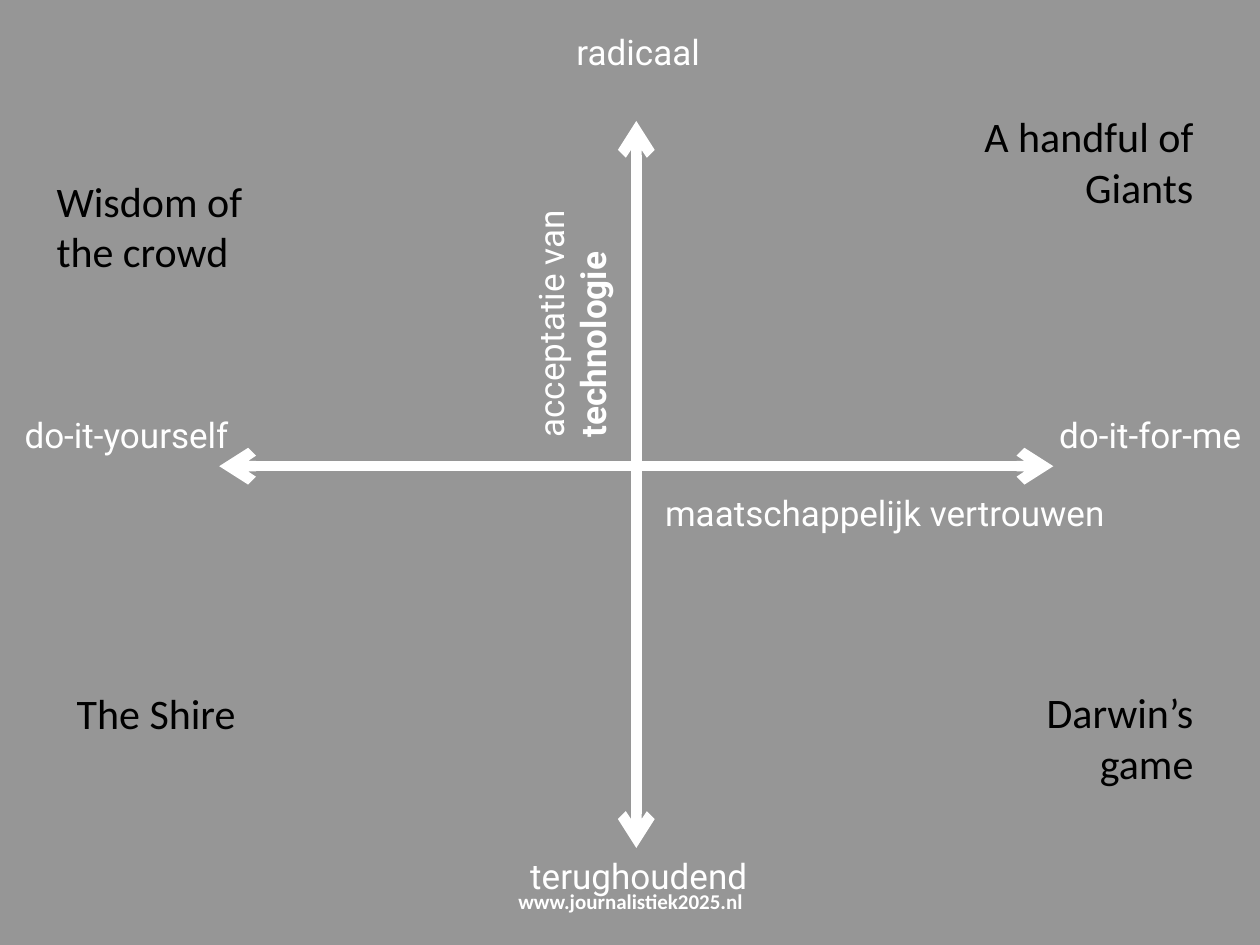
from lxml.etree import SubElement
from pptx import Presentation
from pptx.dml.color import RGBColor as Color
from pptx.enum.shapes import MSO_CONNECTOR as Connector
from pptx.enum.text import MSO_ANCHOR as Anchor, MSO_AUTO_SIZE as AutoSize, PP_ALIGN as Align
from pptx.oxml.ns import qn
from pptx.util import Inches, Pt


class Theme:
    background = Color(0x96, 0x96, 0x96)
    light = Color(0xFF, 0xFF, 0xFF)
    dark = Color(0, 0, 0)
    axis_width = Pt(6)
    axis_text = ("Roboto", Pt(20), light)
    scenario_text = ("Calibri", Pt(24), dark)
    footer_text = ("Calibri", Pt(12), light)


deck = Presentation()
deck.slide_width, deck.slide_height = Inches(10), Inches(7.5)
page = deck.slides.add_slide(deck.slide_layouts[6])
page.background.fill.solid()
page.background.fill.fore_color.rgb = Theme.background

# Grid of 100 columns by 75 rows
COLUMN, ROW = deck.slide_width / 100, deck.slide_height / 75


def place(x, y):
    return round(x * COLUMN), round(y * ROW)


def add_text(area, spans, style, align=Align.LEFT):
    """Add a one-paragraph box; spans are (text, bold) pairs."""
    left, top, width, height = area
    box = page.shapes.add_textbox(*place(left, top), *place(width, height))
    frame = box.text_frame
    frame.word_wrap = True
    frame.auto_size = AutoSize.SHAPE_TO_FIT_TEXT
    para = frame.paragraphs[0]
    para.alignment = align
    for text, bold in spans:
        span = para.add_run()
        span.text = text
        span.font.name, span.font.size, span.font.color.rgb = style
        span.font.bold = bold
    return box


# Axes crossing in the middle, with arrowheads at both ends
CENTRE_X, CENTRE_Y = 50.5, 37
axes = [
    ((CENTRE_X, 67.3), (CENTRE_X, 9.6)),
    ((17.4, CENTRE_Y), (83.6, CENTRE_Y)),
]
for start, end in axes:
    axis = page.shapes.add_connector(Connector.STRAIGHT, *place(*start), *place(*end))
    axis.line.color.rgb = Theme.light
    axis.line.width = Theme.axis_width
    outline = axis.line._get_or_add_ln()
    for tip in ("a:headEnd", "a:tailEnd"):
        SubElement(outline, qn(tip), type="arrow")
    SubElement(axis._element.spPr, qn("a:effectLst"))

# Axis titles
add_text((51.8, 38.5, 46, 4.4), [("maatschappelijk vertrouwen", False)], Theme.axis_text)
technology = add_text(
    (31.6, 18.1, 27.5, 7.7),
    [("acceptatie van ", False), ("technologie", True)],
    Theme.axis_text,
)
technology.rotation = 270

# Labels at the ends of the axes
end_labels = [
    ("do-it-for-me", 79.2, 32.3, 24.2),
    ("do-it-yourself", -2.8, 32.3, 25.7),
    ("radicaal", 39.2, 1.9, 22.9),
    ("terughoudend", 39.3, 67.3, 22.8),
]
for label, left, top, width in end_labels:
    add_text((left, top, width, 4.4), [(label, False)], Theme.axis_text, Align.CENTER)

# Scenario names in the four quadrants
scenarios = [
    ("Wisdom of the crowd", 3.5, 13.4, 9.1, Align.LEFT),
    ("Darwin’s game", 75.2, 54, 9.1, Align.RIGHT),
    ("A handful of Giants", 75.2, 8.3, 9.1, Align.RIGHT),
    ("The Shire", 5.1, 54.1, 5, Align.LEFT),
]
for name, left, top, height, align in scenarios:
    add_text((left, top, 20.5, height), [(name, False)], Theme.scenario_text, align)

# Footer
footer = add_text(
    (34.2, 69.5, 31.7, 4), [("www.journalistiek2025.nl", True)], Theme.footer_text, Align.CENTER
)
footer.text_frame.auto_size = AutoSize.NONE
footer.text_frame.vertical_anchor = Anchor.MIDDLE

deck.save("out.pptx")
